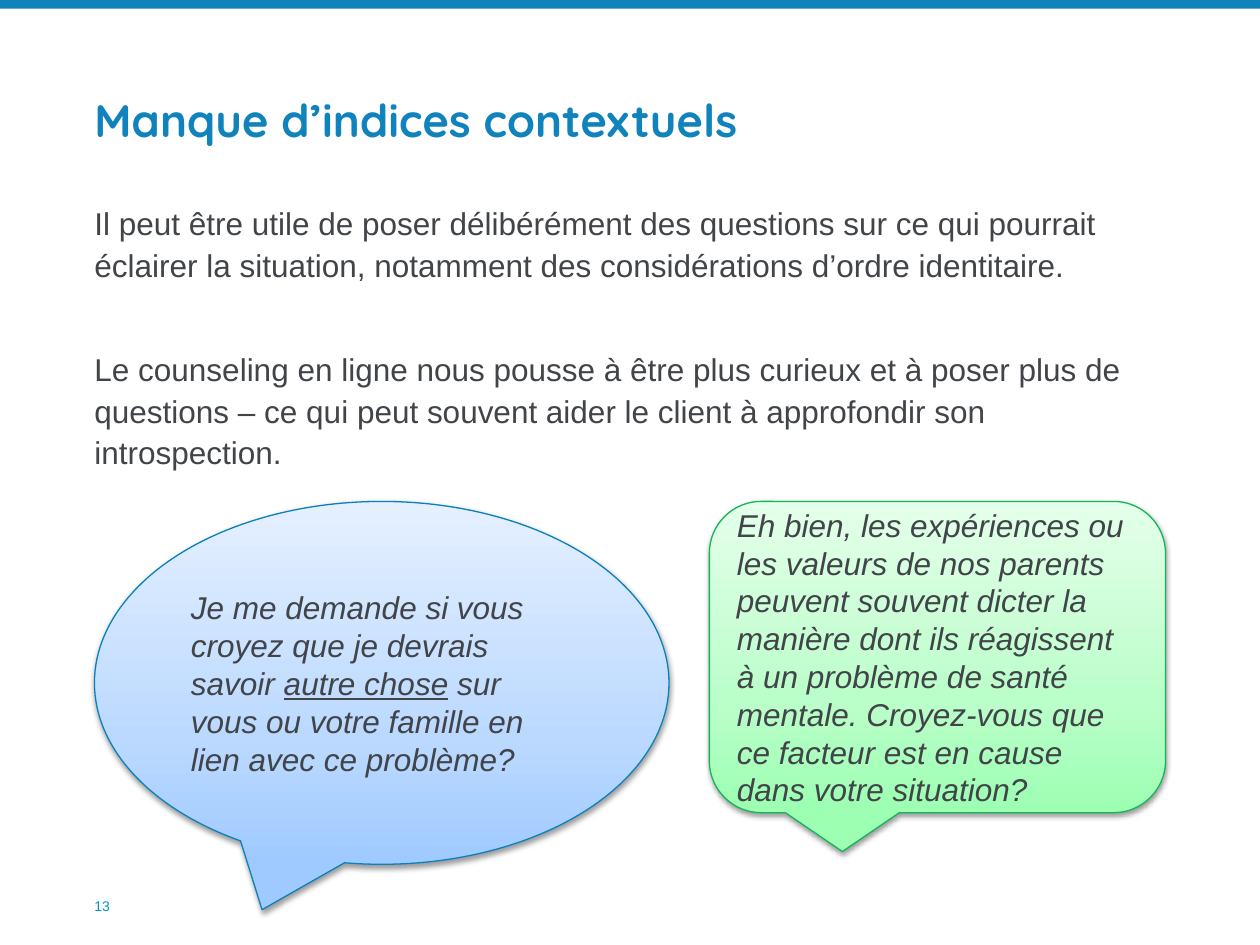
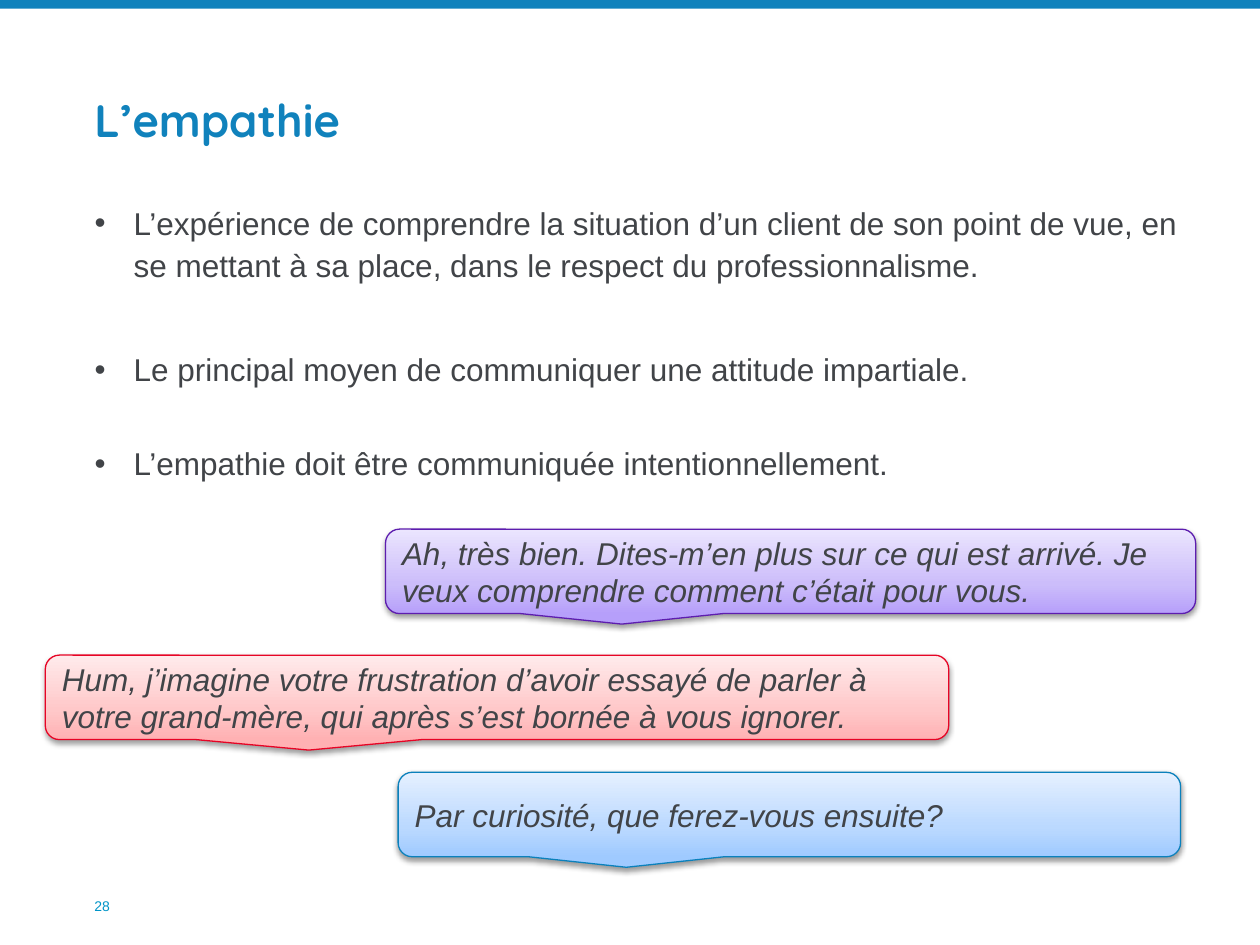
from copy import deepcopy

from lxml import etree
from pptx import Presentation
from pptx.dml.color import RGBColor
from pptx.enum.shapes import MSO_SHAPE as Shape
from pptx.enum.text import MSO_ANCHOR as Anchor, PP_ALIGN as Align
from pptx.oxml.ns import qn
from pptx.util import Inches, Pt

# Shared colours and measures
BRAND_BLUE = RGBColor(0x10, 0x82, 0xBC)
NUMBER_BLUE = RGBColor(0x00, 0x95, 0xC8)
TEXT_GREY = RGBColor(0x41, 0x44, 0x48)
MARGIN = 0.75
CONTENT_WIDTH = 8.5

# Callout palettes: outline, then gradient from bottom to top
GRADIENT_POSITIONS = (0, 0.35, 1)
BLUE = (RGBColor(0x0B, 0x81, 0xBC), RGBColor(0x9F, 0xCA, 0xFF),
        RGBColor(0xBB, 0xD9, 0xFF), RGBColor(0xE5, 0xF0, 0xFF))
GREEN = (RGBColor(0x13, 0xB6, 0x59), RGBColor(0x9C, 0xFF, 0xB2),
         RGBColor(0xBA, 0xFE, 0xC9), RGBColor(0xE4, 0xFF, 0xEA))
PURPLE = (RGBColor(0x5D, 0x1D, 0xAF), RGBColor(0xB6, 0x9F, 0xFA),
          RGBColor(0xCC, 0xBD, 0xFA), RGBColor(0xEB, 0xE5, 0xFE))
RED = (RGBColor(0xE7, 0x04, 0x25), RGBColor(0xFF, 0xB1, 0xB3),
       RGBColor(0xFF, 0xC8, 0xC9), RGBColor(0xFF, 0xEA, 0xEB))

# Text styles
TITLE = {"name": "Quicksand", "size": Pt(26), "bold": True}
BODY = {"name": "Arial", "size": Pt(18)}
SPEECH = {**BODY, "italic": True}
NUMBER = {"name": "Arial", "size": Pt(8)}


def apply(target, values):
    for key, value in values.items():
        setattr(target, key, value)


class Deck:
    """Holds the shared style and the slide being filled."""

    def __init__(self):
        self.prs = Presentation()
        self.prs.slide_width, self.prs.slide_height = Inches(10), Inches(7.5)
        self.slide = None

    def new_slide(self, title, number):
        self.slide = self.prs.slides.add_slide(self.prs.slide_layouts[6])
        self.band()
        self.add_runs(self.text_frame(MARGIN, 7.06, 0.24, 0.2, Anchor.BOTTOM).paragraphs[0],
                      [number], NUMBER, NUMBER_BLUE)
        self.add_runs(self.text_frame(MARGIN, 0.54, CONTENT_WIDTH, 0.62, Anchor.BOTTOM).paragraphs[0],
                      [title], TITLE, BRAND_BLUE)

    def band(self):
        top_band = self.slide.shapes.add_shape(Shape.RECTANGLE, 0, 0, Inches(10), Inches(0.07))
        top_band.shadow.inherit = False
        top_band.fill.solid()
        top_band.fill.fore_color.rgb = BRAND_BLUE
        top_band.line.fill.background()

    def text_frame(self, left, top, width, height, anchor):
        frame = self.slide.shapes.add_textbox(
            Inches(left), Inches(top), Inches(width), Inches(height)).text_frame
        apply(frame, {"word_wrap": True, "vertical_anchor": anchor, "margin_left": 0,
                      "margin_right": 0, "margin_top": 0, "margin_bottom": 0})
        return frame

    def add_runs(self, paragraph, pieces, style, color):
        """Add one run per piece; every second piece is underlined."""
        for index, piece in enumerate(pieces):
            run = paragraph.add_run()
            run.text = piece
            apply(run.font, style)
            run.font.color.rgb = color
            if index % 2:
                run.font.underline = True

    def body(self, items, width=CONTENT_WIDTH, bullets=False):
        """Items are pairs of space before (points) and text."""
        frame = self.text_frame(MARGIN, 1.59, width, 2.4, Anchor.TOP)
        for index, (space, text) in enumerate(items):
            paragraph = frame.add_paragraph() if index else frame.paragraphs[0]
            apply(paragraph, {"line_spacing": 1.1, "space_before": Pt(space)})
            if bullets:
                props = paragraph._p.get_or_add_pPr()
                props.set("marL", str(Inches(0.31)))
                props.set("indent", str(Inches(-0.31)))
                etree.SubElement(props, qn("a:buFont"), typeface="Arial")
                etree.SubElement(props, qn("a:buChar"), char="•")
            self.add_runs(paragraph, [text], BODY, TEXT_GREY)

    def callout(self, kind, left, top, width, height, palette, *pieces):
        outline, *shades = palette
        bubble = self.slide.shapes.add_shape(
            kind, Inches(left), Inches(top), Inches(width), Inches(height))
        self.gradient(bubble, shades)
        bubble.line.color.rgb = outline
        bubble.line.width = Pt(0.75)
        self.soft_shadow(bubble)
        apply(bubble.text_frame, {"word_wrap": True, "vertical_anchor": Anchor.MIDDLE})
        paragraph = bubble.text_frame.paragraphs[0]
        paragraph.alignment = Align.LEFT
        self.add_runs(paragraph, pieces, SPEECH, TEXT_GREY)

    def gradient(self, bubble, shades):
        bubble.fill.gradient()
        bubble.fill.gradient_angle = 90
        stop_list = bubble._element.spPr.find(".//" + qn("a:gsLst"))
        stop_list.append(deepcopy(stop_list[0]))
        for stop, position, shade in zip(bubble.fill.gradient_stops, GRADIENT_POSITIONS, shades):
            stop.position = position
            stop.color.rgb = shade

    def soft_shadow(self, bubble):
        bubble.shadow.inherit = False
        effects = bubble._element.spPr.find(qn("a:effectLst"))
        shadow = etree.SubElement(effects, qn("a:outerShdw"), blurRad="40000", dist="20000",
                                  dir="5400000", rotWithShape="0")
        black = etree.SubElement(shadow, qn("a:srgbClr"), val="000000")
        etree.SubElement(black, qn("a:alpha"), val="38000")


def context_slide(deck):
    deck.new_slide("Manque d’indices contextuels", "13")
    deck.body([
        (6, "Il peut être utile de poser délibérément des questions sur ce qui pourrait "
            "éclairer la situation, notamment des considérations d’ordre identitaire."),
        (36, "Le counseling en ligne nous pousse à être plus curieux et à poser plus de "
             "questions – ce qui peut souvent aider le client à approfondir son introspection."),
    ])
    deck.callout(Shape.OVAL_CALLOUT, MARGIN, 3.98, 4.56, 2.88, BLUE,
                 "Je me demande si vous croyez que je devrais savoir ", "autre chose",
                 " sur vous ou votre famille en lien avec ce problème?")
    deck.callout(Shape.ROUNDED_RECTANGULAR_CALLOUT, 5.63, 3.98, 3.62, 2.47, GREEN,
                 "Eh bien, les expériences ou les valeurs de nos parents peuvent souvent dicter "
                 "la manière dont ils réagissent à un problème de santé mentale. Croyez-vous "
                 "que ce facteur est en cause dans votre situation?")


def empathy_slide(deck):
    deck.new_slide("L’empathie", "28")
    deck.body([
        (6, "L’expérience de comprendre la situation d’un client de son point de vue, en se "
            "mettant à sa place, dans le respect du professionnalisme."),
        (36, "Le principal moyen de communiquer une attitude impartiale."),
        (30, "L’empathie doit être communiquée intentionnellement."),
    ], width=8.92, bullets=True)
    replies = [
        (3.06, 4.2, 6.43, PURPLE, "Ah, très bien. Dites-m’en plus sur ce qui est arrivé. "
                                  "Je veux comprendre comment c’était pour vous."),
        (0.36, 5.2, 7.17, RED, "Hum, j’imagine votre frustration d’avoir essayé de parler à "
                               "votre grand-mère, qui après s’est bornée à vous ignorer."),
        (3.16, 6.13, 6.21, BLUE, "Par curiosité, que ferez-vous ensuite?"),
    ]
    for left, top, width, palette, reply in replies:
        deck.callout(Shape.ROUNDED_RECTANGULAR_CALLOUT, left, top, width, 0.67, palette, reply)


def main():
    deck = Deck()
    context_slide(deck)
    empathy_slide(deck)
    deck.prs.save("out.pptx")


if __name__ == "__main__":
    main()
